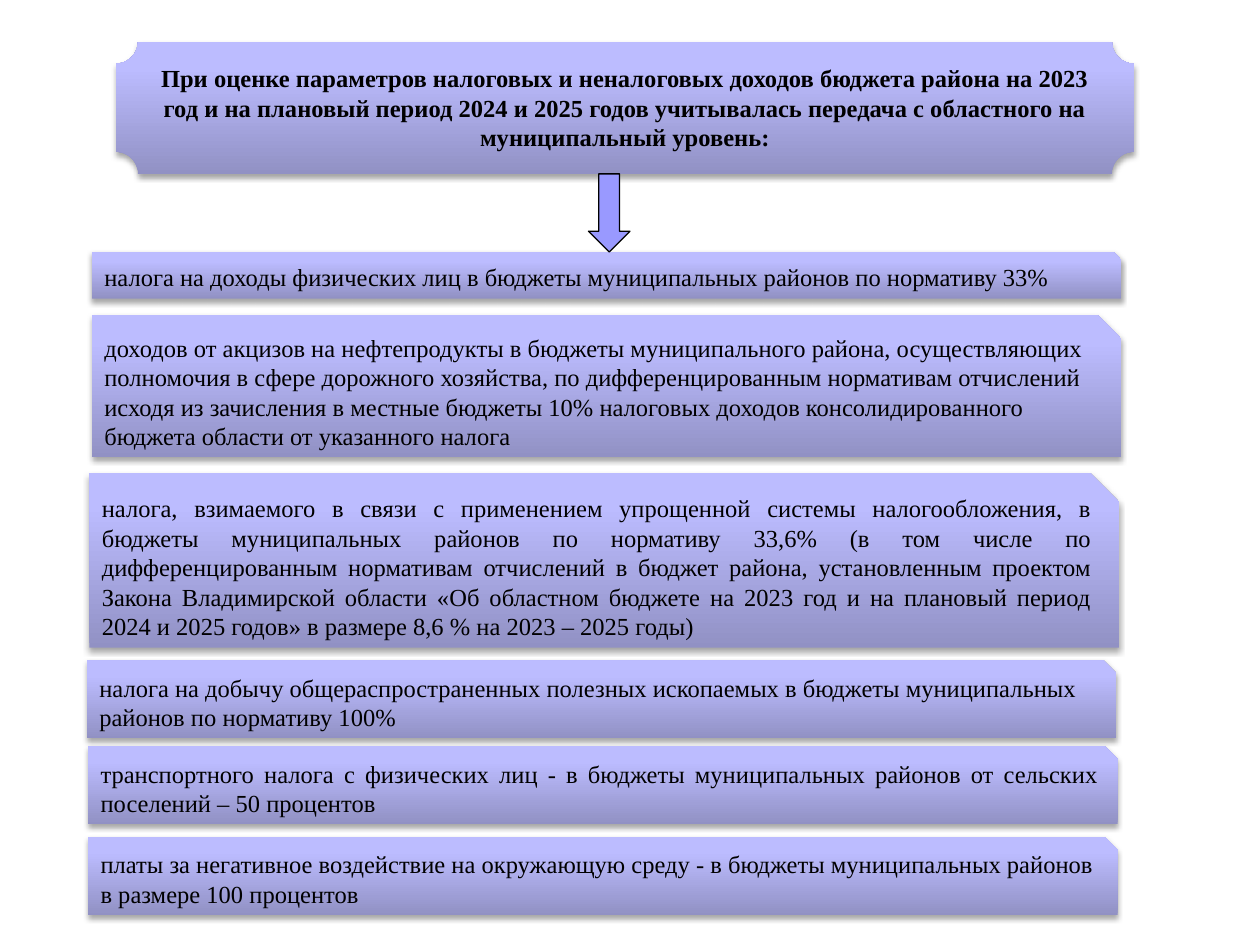
from copy import deepcopy
from dataclasses import dataclass

from lxml.etree import SubElement
from pptx import Presentation
from pptx.dml.color import RGBColor
from pptx.enum.shapes import MSO_SHAPE as SHAPE
from pptx.enum.text import MSO_ANCHOR, MSO_AUTO_SIZE, PP_ALIGN as ALIGN
from pptx.oxml.ns import qn
from pptx.util import Inches, Pt


@dataclass(frozen=True)
class Theme:
    font: str = "Times New Roman"
    size: int = 14
    text: str = "000000"
    line: str = "000000"
    arrow: str = "9999FF"
    shadow: str = "000000"
    gradient: tuple = ((0, "9191C4"), (0.8, "BCBCFF"), (1, "BEBEFF"))


HEADING = (
    "При оценке параметров налоговых и неналоговых доходов бюджета района на 2023 год "
    "и на плановый период 2024 и 2025 годов учитывалась передача с областного на "
    "муниципальный уровень:"
)

# left, top, height, alignment, text
TAXES = [
    (0.73, 2, 0.37, ALIGN.LEFT,
     "налога на доходы физических лиц в бюджеты муниципальных районов по нормативу 33%"),
    (0.73, 2.5, 1.13, ALIGN.LEFT,
     "доходов от акцизов на нефтепродукты в бюджеты муниципального района, осуществляющих "
     "полномочия в сфере дорожного хозяйства, по дифференцированным нормативам отчислений "
     "исходя из зачисления в местные бюджеты 10% налоговых доходов консолидированного "
     "бюджета области от указанного налога"),
    (0.71, 3.75, 1.39, ALIGN.JUSTIFY,
     "налога, взимаемого в связи с применением упрощенной системы налогообложения, в "
     "бюджеты муниципальных районов по нормативу 33,6% (в том числе по дифференцированным "
     "нормативам отчислений в бюджет района, установленным проектом Закона Владимирской "
     "области «Об областном бюджете на 2023 год и на плановый период 2024 и 2025 годов» "
     "в размере 8,6 % на 2023 – 2025 годы)"),
    (0.69, 5.24, 0.62, ALIGN.LEFT,
     "налога на добычу общераспространенных полезных ископаемых в бюджеты муниципальных "
     "районов по нормативу 100%"),
    (0.7, 5.92, 0.62, ALIGN.JUSTIFY,
     "транспортного налога с физических лиц - в бюджеты муниципальных районов от сельских "
     "поселений – 50 процентов"),
    (0.7, 6.64, 0.62, ALIGN.LEFT,
     "платы за негативное воздействие на окружающую среду - в бюджеты муниципальных "
     "районов в размере 100 процентов"),
]
TAX_WIDTH = 8.17


def rgb(value):
    return RGBColor.from_string(value)


class Builder:
    def __init__(self, slide, theme):
        self.slide = slide
        self.theme = theme

    def shape(self, kind, left, top, width, height):
        sp = self.slide.shapes.add_shape(
            kind, Inches(left), Inches(top), Inches(width), Inches(height))
        sp.shadow.inherit = False
        return sp

    def panel(self, kind, left, top, width, height, text, align, bold=False):
        """Add a shaded, shadowed shape holding one paragraph."""
        sp = self.shape(kind, left, top, width, height)
        sp.line.fill.background()
        self.shade(sp)
        self.cast_shadow(sp)
        tf = sp.text_frame
        tf.word_wrap = True
        tf.auto_size = MSO_AUTO_SIZE.SHAPE_TO_FIT_TEXT
        tf.vertical_anchor = MSO_ANCHOR.TOP
        p = tf.paragraphs[0]
        p.text = text
        p.alignment = align
        p.font.name = self.theme.font
        p.font.size = Pt(self.theme.size)
        p.font.bold = bold
        p.font.color.rgb = rgb(self.theme.text)

    def shade(self, sp):
        """Fill with the theme gradient, running from bottom to top."""
        sp.fill.gradient()
        sp.fill.gradient_angle = 90
        stops = sp._element.spPr.find(".//" + qn("a:gsLst"))
        stops.append(deepcopy(stops[-1]))
        for stop, (position, color) in zip(sp.fill.gradient_stops, self.theme.gradient):
            stop.position = position
            stop.color.rgb = rgb(color)

    def cast_shadow(self, sp):
        effects = sp._element.spPr.find(qn("a:effectLst"))
        shadow = SubElement(
            effects, qn("a:outerShdw"), blurRad=str(Pt(3.1)), dist=str(Pt(1.8)),
            dir="5400000", rotWithShape="0")
        color = SubElement(shadow, qn("a:srgbClr"), val=self.theme.shadow)
        SubElement(color, qn("a:alpha"), val="35000")

    def arrow(self, left, top, width, height):
        sp = self.shape(SHAPE.DOWN_ARROW, left, top, width, height)
        sp.fill.solid()
        sp.fill.fore_color.rgb = rgb(self.theme.arrow)
        sp.line.color.rgb = rgb(self.theme.line)
        sp.line.width = Pt(0.75)


def main():
    prs = Presentation()
    prs.slide_width, prs.slide_height = Inches(10), Inches(7.5)
    b = Builder(prs.slides.add_slide(prs.slide_layouts[6]), Theme())
    b.panel(SHAPE.PLAQUE, 0.92, 0.33, 8.08, 1.05, HEADING, ALIGN.CENTER, bold=True)
    for left, top, height, align, text in TAXES:
        b.panel(SHAPE.SNIP_1_RECTANGLE, left, top, TAX_WIDTH, height, text, align)
    b.arrow(4.67, 1.38, 0.33, 0.62)
    prs.save("out.pptx")


if __name__ == "__main__":
    main()
